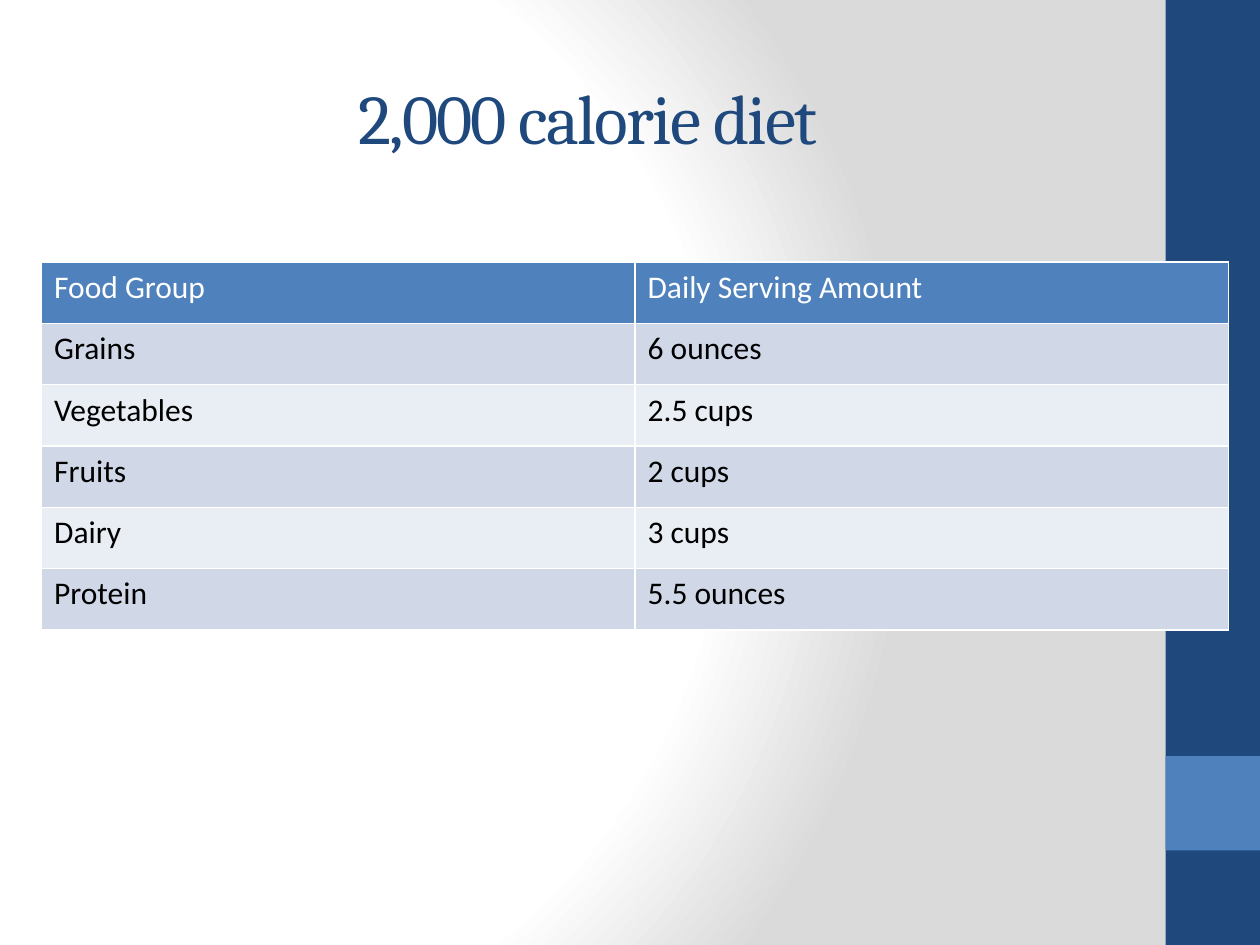
"""Build a slide with a table of daily servings in a 2,000 calorie diet."""
from lxml import etree
from pptx import Presentation
from pptx import util as u
from pptx.dml.color import RGBColor
from pptx.enum import shapes, text

NAVY = RGBColor(0x1F, 0x49, 0x7D)
BLUE = RGBColor(0x4F, 0x81, 0xBD)
WHITE = RGBColor(0xFF, 0xFF, 0xFF)
BLACK = RGBColor(0, 0, 0)
BANDS = RGBColor(0xD0, 0xD8, 0xE8), RGBColor(0xE9, 0xED, 0xF4)

BACK = """<p:bg xmlns:p="http://schemas.openxmlformats.org/presentationml/2006/main"
 xmlns:a="http://schemas.openxmlformats.org/drawingml/2006/main"><p:bgPr>
<a:gradFill rotWithShape="1"><a:gsLst>
<a:gs pos="0"><a:srgbClr val="FFFFFF"/></a:gs>
<a:gs pos="75000"><a:srgbClr val="FFFFFF"/></a:gs>
<a:gs pos="100000"><a:srgbClr val="DADADA"/></a:gs>
</a:gsLst><a:path path="circle">
<a:fillToRect l="20000" t="50000" r="100000" b="50000"/>
</a:path></a:gradFill><a:effectLst/></p:bgPr></p:bg>"""

ROWS = [
    ("Food Group", "Daily Serving Amount"),
    ("Grains", "6 ounces"),
    ("Vegetables", "2.5 cups"),
    ("Fruits", "2 cups"),
    ("Dairy", "3 cups"),
    ("Protein", "5.5 ounces"),
]


def style(run, size, name, color):
    for key, val in {"size": u.Pt(size), "name": name, "bold": False}.items():
        setattr(run.font, key, val)
    run.font.color.rgb = color


deck = Presentation()
deck.slide_width, deck.slide_height = u.Inches(10), u.Inches(7.5)
slide = deck.slides.add_slide(deck.slide_layouts[5])
slide.element.cSld.insert(0, etree.fromstring(BACK))

for top, high, color in [(0, 7.5, NAVY), (6, 0.75, BLUE)]:
    bar = slide.shapes.add_shape(
        shapes.MSO_SHAPE.RECTANGLE,
        u.Inches(9.25), u.Inches(top), u.Inches(0.75), u.Inches(high))
    bar.shadow.inherit = False
    bar.fill.solid()
    bar.fill.fore_color.rgb = color
    bar.line.fill.background()

title = slide.shapes.title
place = {"left": 0.5, "top": 0.3, "width": 8.33, "height": 1.25}
for key, val in place.items():
    setattr(title, key, u.Inches(val))
title.text_frame.text = "2,000 calorie diet"
title.text_frame.vertical_anchor = text.MSO_ANCHOR.MIDDLE
para = title.text_frame.paragraphs[0]
para.alignment = text.PP_ALIGN.CENTER
style(para.runs[0], 40, "Cambria", NAVY)
para.runs[0].font._element.set("spc", "-100")

table = slide.shapes.add_table(
    len(ROWS), 2, u.Inches(0.33), u.Inches(2.08),
    u.Inches(9.42), u.Inches(2.92)).table
for r, row in enumerate(ROWS):
    for c, word in enumerate(row):
        cell = table.cell(r, c)
        cell.text = word
        cell.fill.solid()
        cell.fill.fore_color.rgb = BANDS[(r - 1) % 2] if r else BLUE
        style(cell.text_frame.paragraphs[0].runs[0], 18, "Calibri",
              BLACK if r else WHITE)

deck.save("out.pptx")
